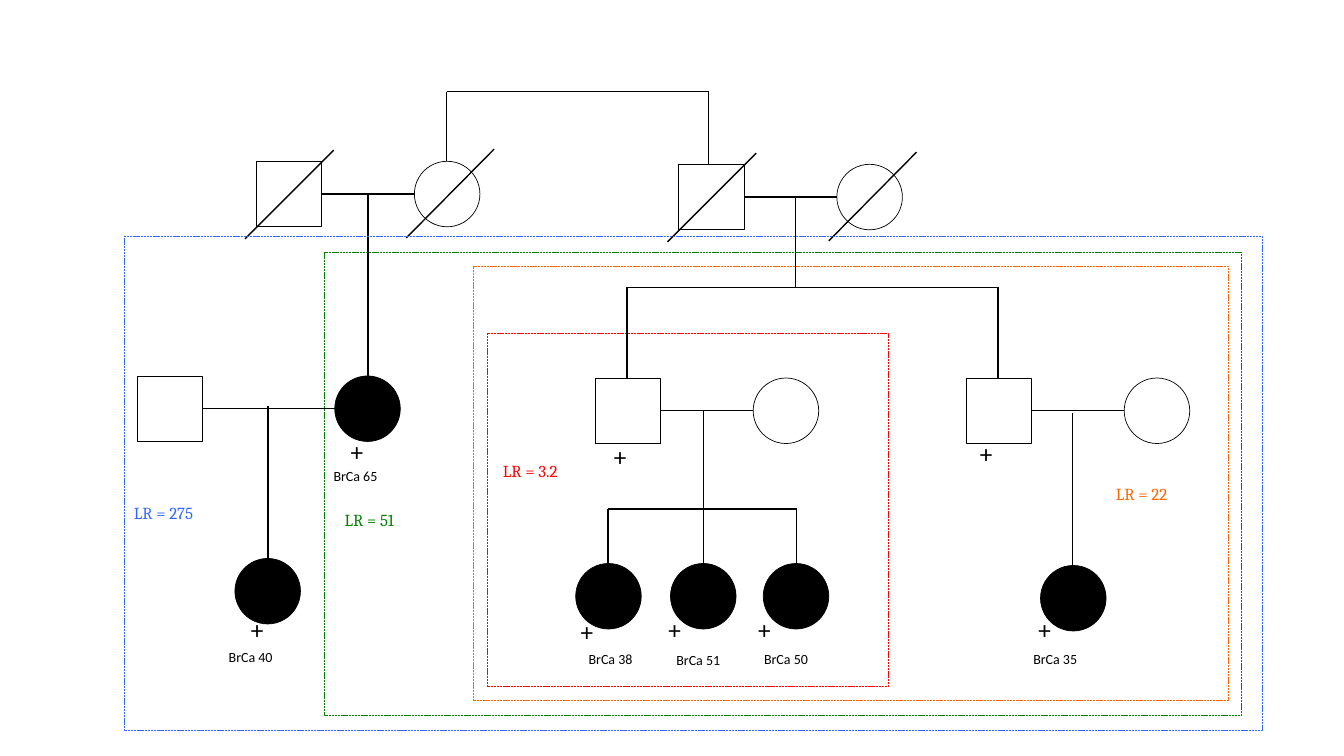
from lxml import etree
from pptx import Presentation
from pptx.dml.color import RGBColor
from pptx.enum.dml import MSO_LINE
from pptx.enum.shapes import MSO_CONNECTOR, MSO_SHAPE
from pptx.enum.text import PP_ALIGN
from pptx.oxml.ns import qn
from pptx.util import Inches, Pt

RECT, OVAL = MSO_SHAPE.RECTANGLE, MSO_SHAPE.OVAL
STRAIGHT, DASH, LEFT = MSO_CONNECTOR.STRAIGHT, MSO_LINE.SQUARE_DOT, PP_ALIGN.LEFT
COLORS = {"ink": "000000", "paper": "FFFFFF", "red": "FF0000",
          "orange": "FF6600", "green": "008000", "blue": "3366FF"}
COLS, ROWS = 13.33, 7.5
CELL = Inches(1)
SIZE = 0.65
HALF = SIZE / 2
SPOUSE = 1.57


def color(name):
    return RGBColor.from_string(COLORS[name])


def grid(*lengths):
    return [round(n * CELL) for n in lengths]


def outline(s, kind, box, line, fill=None):
    sp = s.shapes.add_shape(kind, *grid(*box))
    sp.shadow.inherit = False
    if fill:
        sp.fill.solid()
        sp.fill.fore_color.rgb = color(fill)
    else:
        sp.fill.background()
    sp.line.color.rgb = color(line)
    sp.line.width = Pt(0.5)
    return sp


def line(s, x1, y1, x2, y2):
    c = s.shapes.add_connector(STRAIGHT, *grid(x1, y1, x2, y2))
    c.line.color.rgb = color("ink")
    c.line.width = Pt(1)
    etree.SubElement(c._element.spPr, qn("a:effectLst"))


def text(s, box, words, size, font="Calibri", ink="ink"):
    tf = s.shapes.add_textbox(*grid(*box)).text_frame
    tf.word_wrap = True
    p = tf.paragraphs[0]
    p.text = words
    p.alignment = LEFT
    f = p.runs[0].font
    f.size, f.name, f.color.rgb = Pt(size), font, color(ink)


def carrier_mark(s, x, y):
    text(s, (x, y, 0.53, 0.66), "+", 18)


def affected(s, x, y, age, label, mark):
    outline(s, OVAL, (x, y, SIZE, SIZE), "ink", "ink")
    text(s, (x + label[0], y + label[1], 1.04, 0.44), f"BrCa {age}", 10)
    carrier_mark(s, x + mark[0], y + mark[1])


def couple(s, x, y):
    outline(s, RECT, (x, y, SIZE, SIZE), "ink")
    outline(s, OVAL, (x + SPOUSE, y, SIZE, SIZE), "ink", "paper")
    line(s, x + SIZE, y + HALF, x + SPOUSE, y + HALF)


def frame(s, box, ink, ratio, at):
    outline(s, RECT, box, ink).line.dash_style = DASH
    x, y = box[:2]
    text(s, (x + at[0], y + at[1], 1.3, 0.49), f"LR = {ratio}", 12, "Cambria", ink)


def grandparents(s, x, y, descent, bottom):
    couple(s, x, y)
    line(s, x - 0.11, y + 0.77, x + 0.77, y - 0.11)
    line(s, x + 1.49, y + 0.76, x + 2.36, y - 0.12)
    line(s, x + descent, y + HALF, x + descent, bottom)


def sibling_bar(s, left, right, top, drops):
    line(s, left, top, right, top)
    for x, bottom in zip((left, right), drops):
        line(s, x, top, x, bottom)


def sisters_family(s, box):
    x, y = box[:2]
    frame(s, box, "red", "3.2", (0.06, 1.21))
    couple(s, x + 1.07, y + 0.44)
    carrier_mark(s, x + 1.16, y + 1.02)
    line(s, x + 2.15, y + 0.77, x + 2.15, y + 2.28)
    sibling_bar(s, x + 1.2, x + 3.07, y + 1.74, (y + 2.28, y + 2.28))
    sisters = [(0.88, 38, (0.03, 0.81), (-0.05, 0.48)),
               (1.82, 51, (-0.04, 0.82), (-0.12, 0.46)),
               (2.74, 50, (-0.09, 0.81), (-0.15, 0.46))]
    for dx, age, label, mark in sisters:
        affected(s, x + dx, y + 2.28, age, label, mark)


def brothers_family(s, box):
    x, y = box[:2]
    frame(s, box, "orange", "22", (6.28, 2.11))
    sibling_bar(s, x + 1.53, x + 5.21, y + 0.21, (y + 1.11, y + 1.11))
    couple(s, x + 4.89, y + 1.11)
    carrier_mark(s, x + 4.93, y + 1.66)
    line(s, x + 5.95, y + 1.46, x + 5.95, y + 2.97)
    affected(s, x + 5.63, y + 2.97, 35, (-0.17, 0.79), (-0.12, 0.44))


def aunt(s, box):
    x, y = box[:2]
    frame(s, box, "green", "51", (0.1, 2.51))
    affected(s, x + 0.1, y + 1.23, 65, (-0.11, 0.86), (0.06, 0.55))


def cousin_family(s, box):
    x, y = box[:2]
    frame(s, box, "blue", "275", (0, 2.59))
    outline(s, RECT, (x + 0.13, y + 1.38, SIZE, SIZE), "ink")
    line(s, x + 0.78, y + 1.7, x + 2.09, y + 1.7)
    line(s, x + 1.43, y + 1.68, x + 1.43, y + 3.19)
    affected(s, x + 1.1, y + 3.19, 40, (-0.16, 0.84), (0.06, 0.51))


def main():
    prs = Presentation()
    prs.slide_width, prs.slide_height = grid(COLS, ROWS)
    s = prs.slides.add_slide(prs.slide_layouts[6])
    sisters_family(s, (4.83, 3.31, 3.98, 3.5))
    brothers_family(s, (4.69, 2.64, 7.49, 4.31))
    grandparents(s, 6.73, 1.63, 1.16, 2.85)
    grandparents(s, 2.54, 1.6, 1.11, 3.73)
    sibling_bar(s, 4.43, 7.03, 0.91, (1.6, 1.63))
    aunt(s, (3.22, 2.5, 9.09, 4.6))
    cousin_family(s, (1.23, 2.35, 11.29, 4.9))
    prs.save("out.pptx")


if __name__ == "__main__":
    main()
